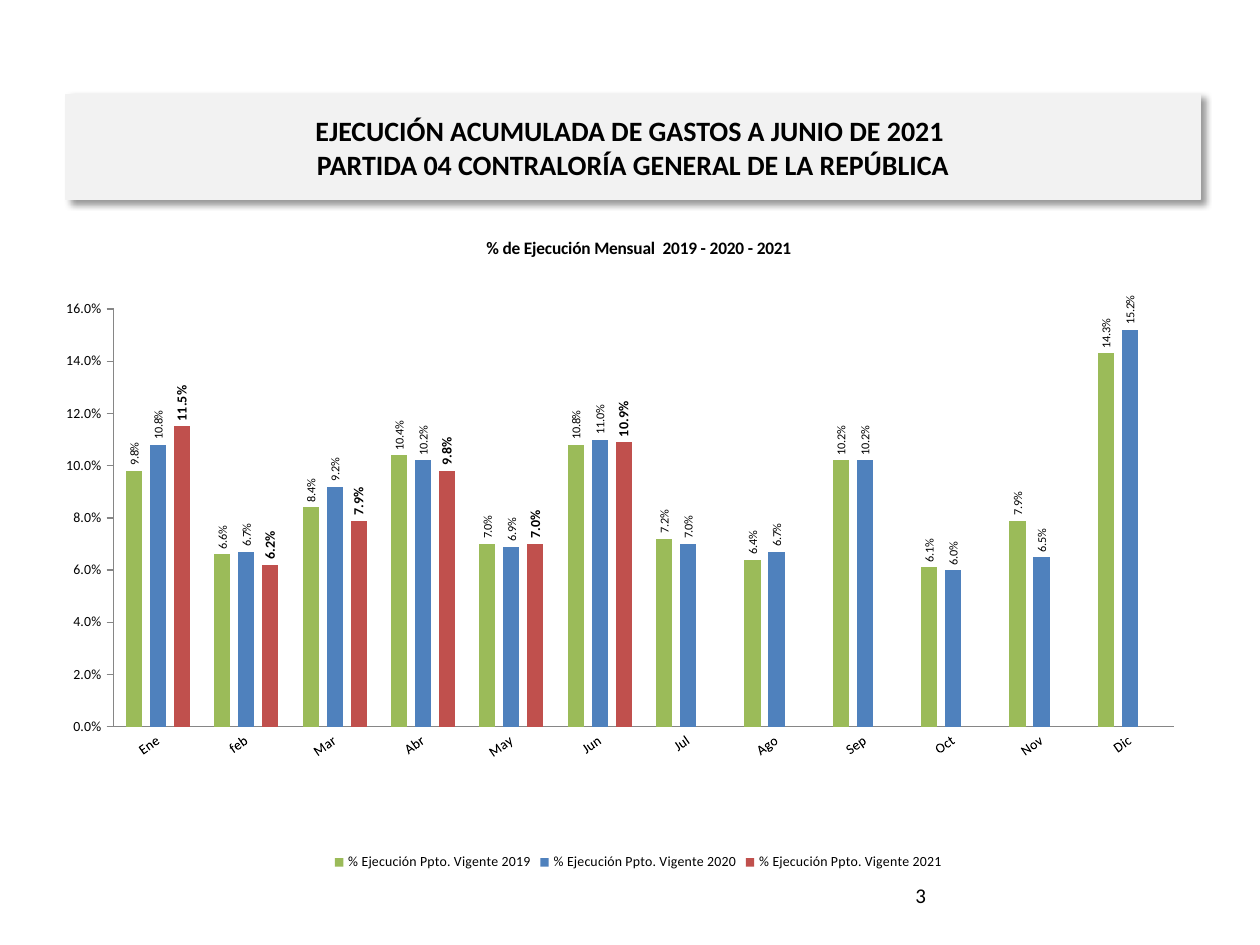
import pptx
import pptx.chart.data
import pptx.dml.color
import pptx.enum.chart
import pptx.enum.text
import pptx.oxml
import pptx.oxml.ns
import pptx.util

FONT = "Calibri"
WIDE, HIGH = 1134, 662  # chart frame
MONTHS = ["Ene", "feb", "Mar", "Abr", "May", "Jun",
          "Jul", "Ago", "Sep", "Oct", "Nov", "Dic"]
# year, bar colour, label size, bold label, monthly shares
YEARS = [
    (2019, "9BBB59", 7, False, [0.098, 0.066, 0.084, 0.104, 0.07, 0.108,
                                0.072, 0.064, 0.102, 0.061, 0.079, 0.143]),
    (2020, "4F81BD", 7, False, [0.108, 0.067, 0.092, 0.102, 0.069, 0.11,
                                0.07, 0.067, 0.102, 0.06, 0.065, 0.152]),
    (2021, "C0504D", 8, True, [0.115, 0.062, 0.079, 0.098, 0.07, 0.109]),
]


def px(n):
    return pptx.util.Emu(round(n * 914400 / 126))


def rgb(code):
    return pptx.dml.color.RGBColor.from_string(code)


def style(font, size, bold=False):
    font.name = FONT
    font.size = pptx.util.Pt(size)
    font.bold = bold
    font.color.rgb = rgb("000000")


def outline(line, code):
    line.color.rgb = rgb(code)
    line.width = pptx.util.Pt(0.75)


def node(xml):
    return pptx.oxml.parse_xml(xml)


def place(shape, left, top, width, height):
    shape.left, shape.top = px(left), px(top)
    shape.width, shape.height = px(width), px(height)


def turn(item, angle):
    """Rotate the text of a chart part, in degrees."""
    body = item._element.xpath("c:txPr/a:bodyPr")[0]
    body.set("rot", str(angle * 60000))
    body.set("vert", "horz")


def add_title(slide, text):
    title = slide.shapes.title
    place(title, 66, 106, 1134, 82)
    title.fill.solid()
    title.fill.fore_color.rgb = rgb("F2F2F2")
    outline(title.line, "F2F2F2")
    title._element.spPr.append(node(
        f'<a:effectLst {pptx.oxml.ns.nsdecls("a")}>'
        '<a:outerShdw blurRad="50800" dist="38100" dir="2700000" algn="tl" '
        'rotWithShape="0"><a:srgbClr val="000000"><a:alpha val="40000"/>'
        '</a:srgbClr></a:outerShdw></a:effectLst>'))
    frame = title.text_frame
    frame.vertical_anchor = pptx.enum.text.MSO_ANCHOR.MIDDLE
    frame.auto_size = pptx.enum.text.MSO_AUTO_SIZE.SHAPE_TO_FIT_TEXT
    frame.text = text
    para = frame.paragraphs[0]
    para.alignment = pptx.enum.text.PP_ALIGN.CENTER
    style(para.font, 16, True)


def add_number(slide, text):
    box = slide.shapes.add_textbox(px(903), px(876), px(294), px(50))
    frame = box.text_frame
    frame.word_wrap = True
    frame.text = text
    style(frame.paragraphs[0].font, 12)


def set_plot(chart, left, top, width, height):
    """Fix the inner plot area, in px inside the chart frame."""
    area = chart._chartSpace.chart.plotArea
    for old in area.xpath("c:layout"):
        area.remove(old)
    sides = {"x": left / WIDE, "y": top / HIGH,
             "w": width / WIDE, "h": height / HIGH}
    area.insert(0, node(
        f'<c:layout {pptx.oxml.ns.nsdecls("c")}><c:manualLayout>'
        '<c:layoutTarget val="inner"/><c:xMode val="edge"/>'
        '<c:yMode val="edge"/>'
        + "".join(f'<c:{key} val="{val:.4f}"/>' for key, val in sides.items())
        + '</c:manualLayout></c:layout>'))


def format_axes(chart):
    marks = pptx.enum.chart.XL_TICK_MARK
    months, shares = chart.category_axis, chart.value_axis
    for axis in (months, shares):
        outline(axis.format.line, "868686")
        axis.has_major_gridlines = False
        axis.minor_tick_mark = marks.NONE
    style(months.tick_labels.font, 8)
    months.major_tick_mark = marks.NONE
    turn(months, -35)
    shares.tick_labels.font.size = pptx.util.Pt(8)
    shares.major_tick_mark = marks.OUTSIDE
    shares.tick_labels.number_format = "0.0%"
    shares.tick_labels.number_format_is_linked = False


def format_bars(bars, color, size, bold):
    bars.format.fill.solid()
    bars.format.fill.fore_color.rgb = rgb(color)
    bars.invert_if_negative = False
    labels = bars.data_labels
    style(labels.font, size, bold)
    turn(labels, -90)
    labels.number_format = "0.0%"
    labels.number_format_is_linked = False
    labels.position = pptx.enum.chart.XL_LABEL_POSITION.OUTSIDE_END
    labels.show_value = True


def add_chart(slide, text):
    data = pptx.chart.data.CategoryChartData(number_format="0.0%")
    data.categories = MONTHS
    for year, *_, shares in YEARS:
        data.add_series(f"% Ejecución Ppto. Vigente {year}", shares)
    kind = pptx.enum.chart.XL_CHART_TYPE.COLUMN_CLUSTERED
    chart = slide.shapes.add_chart(
        kind, px(66), px(214), px(WIDE), px(HIGH), data).chart
    style(chart.font, 10)

    chart.has_title = True
    frame = chart.chart_title.text_frame
    frame.text = text
    style(frame.paragraphs[0].font, 10, True)
    chart.chart_title.include_in_layout = False

    chart.has_legend = True
    chart.legend.position = pptx.enum.chart.XL_LEGEND_POSITION.BOTTOM
    chart.legend.include_in_layout = False
    style(chart.legend.font, 8)

    plot = chart.plots[0]
    plot.vary_by_categories = False
    plot.gap_width, plot.overlap = 150, -49
    for bars, (_, color, size, bold, _) in zip(plot.series, YEARS):
        format_bars(bars, color, size, bold)
    format_axes(chart)
    set_plot(chart, 37, 95, 1071, 418)


def main():
    deck = pptx.Presentation()
    deck.slide_width, deck.slide_height = px(1260), px(945)
    slide = deck.slides.add_slide(deck.slide_layouts[5])
    add_number(slide, "3")
    add_title(slide, "EJECUCIÓN ACUMULADA DE GASTOS A JUNIO DE 2021 \v"
                     "PARTIDA 04 CONTRALORÍA GENERAL DE LA REPÚBLICA")
    add_chart(slide, "% de Ejecución Mensual  2019 - 2020 - 2021")
    deck.save("out.pptx")


if __name__ == "__main__":
    main()
